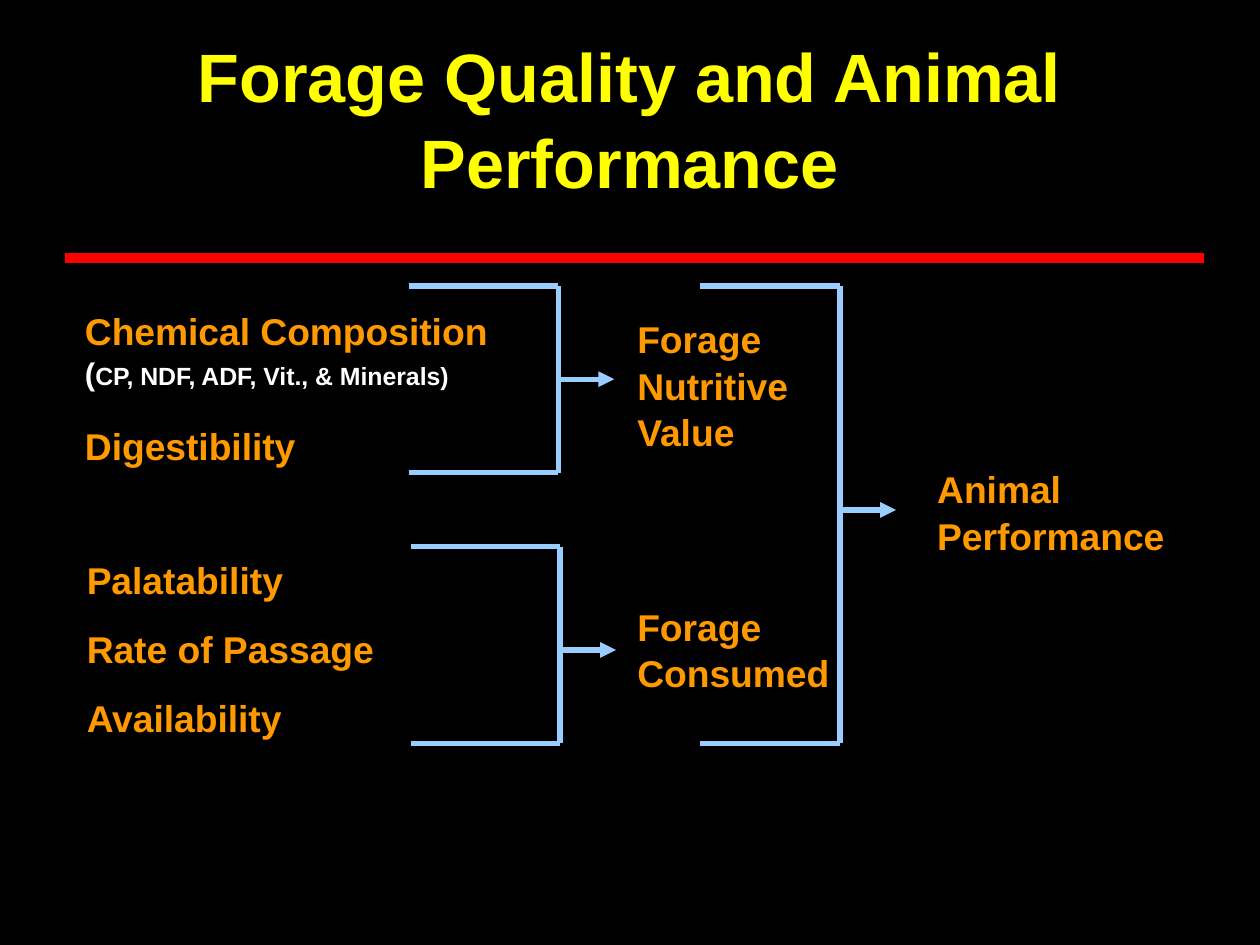
import pptx
import pptx.util
import pptx.dml.color
import pptx.enum.shapes
import pptx.enum.text
import pptx.oxml
import pptx.oxml.ns

Pt = pptx.util.Pt
RGB = pptx.dml.color.RGBColor.from_string
COLORS = {
    "background": "000000",
    "title": "FFFF00",
    "rule": "FF0000",
    "bracket": "99CCFF",
    "label": "FF9900",
    "note": "FFFFFF",
}
LINE_SPACING = 1.045
LABEL = {"size": 21.3, "color": "label"}


def set_attrs(obj, values):
    for name, value in values.items():
        setattr(obj, name, value)


def add_run(p, text, size, color):
    r = p.add_run()
    r.text = text
    set_attrs(r.font, {"name": "Arial", "size": Pt(size), "bold": True})
    r.font.color.rgb = RGB(COLORS[color])


def add_title(slide, text):
    sp = slide.shapes.title
    set_attrs(sp, {"left": Pt(36), "top": Pt(21.6), "width": Pt(648), "height": Pt(90)})
    set_attrs(sp.text_frame, {
        "word_wrap": True,
        "auto_size": pptx.enum.text.MSO_AUTO_SIZE.NONE,
        "vertical_anchor": pptx.enum.text.MSO_ANCHOR.MIDDLE,
    })
    p = sp.text_frame.paragraphs[0]
    set_attrs(p, {"alignment": pptx.enum.text.PP_ALIGN.CENTER,
                  "line_spacing": LINE_SPACING})
    add_run(p, text, 39.1, "title")


def add_label(slide, box, paragraphs):
    """Add a text box; each paragraph is (space before, [(text, format), ...])."""
    tf = slide.shapes.add_textbox(*map(Pt, box)).text_frame
    set_attrs(tf, {"word_wrap": False,
                   "auto_size": pptx.enum.text.MSO_AUTO_SIZE.SHAPE_TO_FIT_TEXT})
    for i, (gap, runs) in enumerate(paragraphs):
        p = tf.add_paragraph() if i else tf.paragraphs[0]
        set_attrs(p, {"space_before": Pt(gap), "line_spacing": LINE_SPACING})
        for text, fmt in runs:
            add_run(p, text, **fmt)


def plain_lines(lines, gap=0):
    return [(gap if i else 0, [(text, LABEL)]) for i, text in enumerate(lines)]


def add_line(slide, start, end, color, width, arrow=False):
    line = slide.shapes.add_connector(
        pptx.enum.shapes.MSO_CONNECTOR.STRAIGHT, *map(Pt, start + end))
    line.line.color.rgb = RGB(COLORS[color])
    line.line.width = Pt(width)
    if arrow:
        tail = pptx.oxml.parse_xml(
            f'<a:tailEnd {pptx.oxml.ns.nsdecls("a")} type="triangle"/>')
        line.line._get_or_add_ln().append(tail)
    line._element.spPr.append(
        pptx.oxml.parse_xml(f'<a:effectLst {pptx.oxml.ns.nsdecls("a")}/>'))


def add_bracket(slide, left, top, right, bottom, arrow_y):
    """Add a right-hand bracket with an arrow leading on to the next label."""
    for start, end, arrow in (
        ((left, top), (right, top), False),
        ((left, bottom), (right, bottom), False),
        ((right, top), (right, bottom), False),
        ((right, arrow_y), (right + 32, arrow_y), True),
    ):
        add_line(slide, start, end, "bracket", 3, arrow)


def main():
    prs = pptx.Presentation()
    set_attrs(prs, {"slide_width": Pt(720), "slide_height": Pt(540)})
    slide = prs.slides.add_slide(prs.slide_layouts.get_by_name("Title Only"))
    slide.background.fill.solid()
    slide.background.fill.fore_color.rgb = RGB(COLORS["background"])

    add_title(slide, "Forage Quality and Animal Performance")
    add_line(slide, (37.4, 147.4), (688.2, 147.4), "rule", 6)

    add_label(slide, (41.5, 171.4, 247.7, 98), [
        (0, [("Chemical Composition", LABEL)]),
        (0, [("(", {"size": 17.8, "color": "note"}),
             ("CP, NDF, ADF, Vit., & Minerals)", {"size": 14.2, "color": "note"})]),
        (17, [("Digestibility", LABEL)]),
    ])
    for box, lines, gap in (
        ((42.5, 313.7, 180.7, 111),
         ("Palatability", "Rate of Passage", "Availability"), 12.9),
        ((357.1, 176.4, 101.5, 85), ("Forage", "Nutritive", "Value"), 0),
        ((357.1, 340.6, 126, 59), ("Forage", "Consumed"), 0),
        ((528.5, 262.1, 146.2, 59), ("Animal", "Performance"), 0),
    ):
        add_label(slide, box, plain_lines(lines, gap))

    for bracket in (
        (233.5, 163.4, 319, 270, 216.7),
        (234.7, 312.5, 320, 424.8, 371.4),
        (400, 163.4, 480, 424.8, 291.4),
    ):
        add_bracket(slide, *bracket)
    prs.save("out.pptx")


if __name__ == "__main__":
    main()
